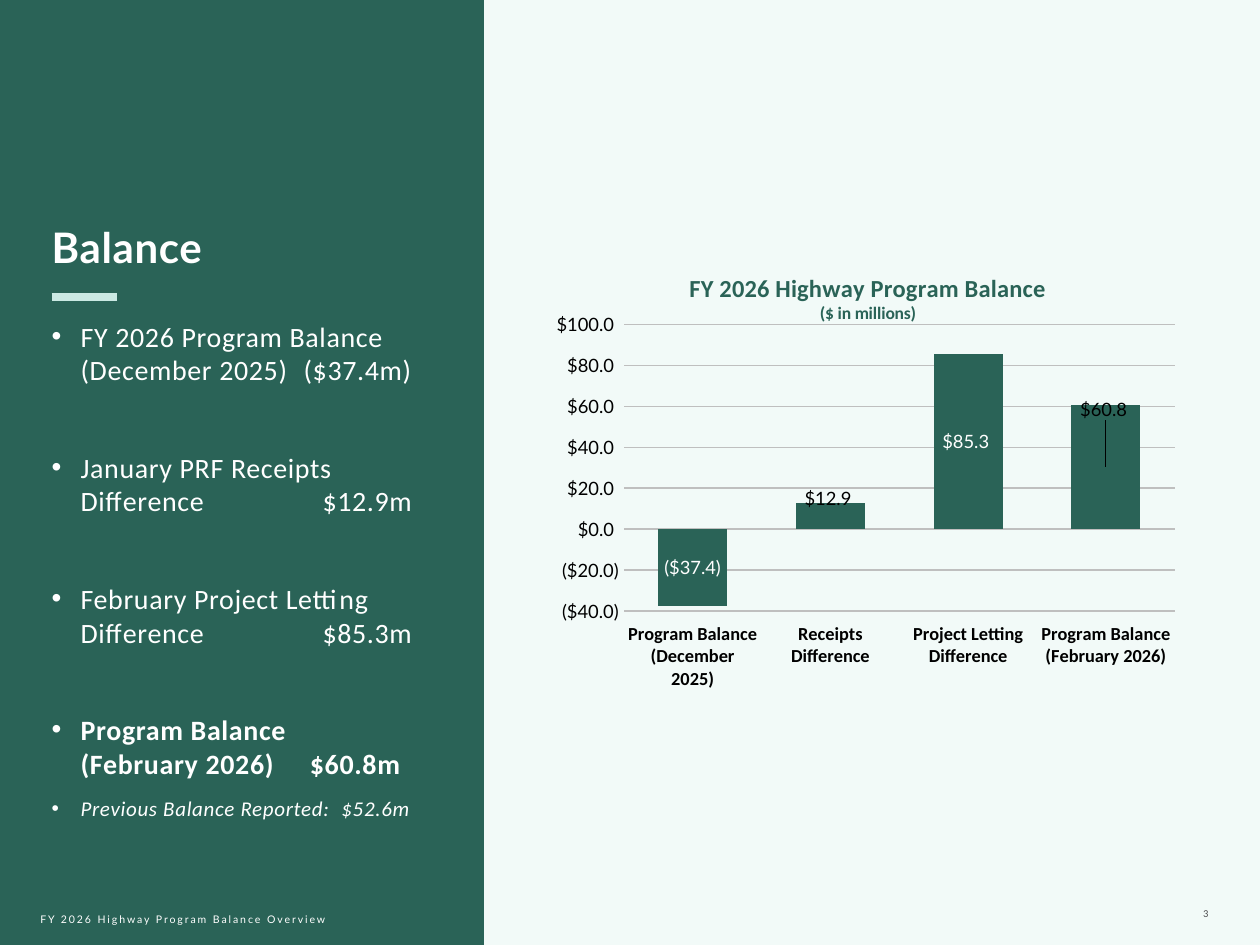
from copy import deepcopy
from dataclasses import dataclass

from lxml.etree import SubElement
from pptx import Presentation
from pptx.chart.data import CategoryChartData
from pptx.dml.color import RGBColor
from pptx.enum.chart import XL_CHART_TYPE, XL_LABEL_POSITION, XL_TICK_LABEL_POSITION, XL_TICK_MARK
from pptx.enum.shapes import MSO_CONNECTOR, MSO_SHAPE
from pptx.enum.text import MSO_ANCHOR, MSO_AUTO_SIZE, PP_ALIGN
from pptx.oxml.ns import qn
from pptx.util import Inches, Pt

GREEN = RGBColor(0x2A, 0x63, 0x57)
MINT = RGBColor(0xCB, 0xE9, 0xE3)
PALE = RGBColor(0xF2, 0xFA, 0xF8)
WHITE = RGBColor(0xFF, 0xFF, 0xFF)
BLACK = RGBColor(0, 0, 0)
GRID_GRAY = RGBColor(0xBF, 0xBF, 0xBF)
NUMBER_GRAY = RGBColor(0x4D, 0x4D, 0x4F)
MONEY = '"$"#,##0.0_);\\("$"#,##0.0\\)'

WIDTH, HEIGHT = Inches(10), Inches(7.5)
COLUMN, ROW = WIDTH / 100, HEIGHT / 75
HANG = round(2.3 * COLUMN)


@dataclass(frozen=True)
class Area:
    column: float
    row: float
    columns: float
    rows: float

    def place(self) -> tuple[int, int, int, int]:
        return (round(self.column * COLUMN), round(self.row * ROW),
                round(self.columns * COLUMN), round(self.rows * ROW))


@dataclass(frozen=True)
class Entry:
    text: str
    amount_column: float
    before: float = 36.5
    size: float = 16
    bold: bool = False
    italic: bool = False


@dataclass(frozen=True)
class Bar:
    category: str
    value: float
    label_color: RGBColor = WHITE
    label_shift: float = 0


ENTRIES = (
    Entry("FY 2026 Program Balance\v(December 2025)\t($37.4m)", 20, before=9),
    Entry("January PRF Receipts\vDifference\t$12.9m", 21.5),
    Entry("February Project Letting\vDifference\t$85.3m", 21.5),
    Entry("Program Balance\v(February 2026)\t$60.8m", 20.5, bold=True),
    Entry("Previous Balance Reported:\t$52.6m", 23, before=9, size=12, italic=True),
)
BARS = (
    Bar("Program Balance (December 2025)", -37.4),
    Bar("Receipts Difference", 12.9, BLACK, -0.04),
    Bar("Project Letting Difference", 85.3),
    Bar("Program Balance (February 2026)", 60.8, BLACK, -0.13),
)


def style_font(font, size: float, color: RGBColor, face: str, bold=False, italic=False) -> None:
    font.size, font.name, font.bold, font.italic = Pt(size), face, bold, italic
    font.color.rgb = color


def write(paragraph, text: str, *, size: float, color=WHITE, face="Calibri",
          bold=False, italic=False, spacing: float = 0, align=PP_ALIGN.LEFT) -> None:
    paragraph.text = text
    paragraph.alignment = align
    for run in paragraph.runs:
        style_font(run.font, size, color, face, bold, italic)
        run.font._element.set("spc", str(round(spacing * 100)))
    for line_break in paragraph._p.findall(qn("a:br")):
        line_break.insert(0, deepcopy(paragraph.runs[0].font._element))


def add_frame(slide, area: Area, anchor=MSO_ANCHOR.TOP, padding: float = 0):
    frame = slide.shapes.add_textbox(*area.place()).text_frame
    frame.word_wrap = True
    frame.vertical_anchor = anchor
    frame.margin_left = frame.margin_right = 0
    frame.margin_top = frame.margin_bottom = round(padding * ROW)
    return frame


def add_panel(slide, area: Area) -> None:
    panel = slide.shapes.add_shape(MSO_SHAPE.RECTANGLE, *area.place())
    panel.shadow.inherit = False
    panel.fill.solid()
    panel.fill.fore_color.rgb = GREEN
    panel.line.fill.background()


def add_rule(slide, area: Area) -> None:
    left, top, width, height = area.place()
    rule = slide.shapes.add_connector(MSO_CONNECTOR.STRAIGHT, left, top, left + width, top + height)
    rule.line.color.rgb = MINT
    rule.line.width = Pt(4.5)
    SubElement(rule._element.spPr, qn("a:effectLst"))


def add_entry(frame, entry: Entry) -> None:
    paragraph = frame.add_paragraph()
    write(paragraph, entry.text, size=entry.size, bold=entry.bold,
          italic=entry.italic, spacing=0.4)
    paragraph.space_before = Pt(entry.before)
    properties = paragraph._p.get_or_add_pPr()
    properties.set("marL", str(HANG))
    properties.set("indent", str(-HANG))
    SubElement(properties, qn("a:buFont"), typeface="Arial")
    SubElement(properties, qn("a:buChar"), char="•")
    stops = SubElement(properties, qn("a:tabLst"))
    SubElement(stops, qn("a:tab"), pos=str(round(entry.amount_column * COLUMN)), algn="l")


def manual_layout(**values):
    holder = XL_HOLDER()
    layout = SubElement(holder, qn("c:manualLayout"))
    for tag, value in values.items():
        SubElement(layout, qn(f"c:{tag}"), val=str(value))
    return holder


def XL_HOLDER():
    return SubElement(SubElement(Presentation().slides._sldIdLst, qn("c:chart")), qn("c:layout"))


def set_layout(parent, **values) -> None:
    for old in parent.findall(qn("c:layout")):
        parent.remove(old)
    parent.insert(1 if parent.tag != qn("c:plotArea") else 0, manual_layout(**values))


def label_bar(series, index: int, bar: Bar) -> None:
    label = series.points[index].data_label
    style_font(label.font, 10.5, bar.label_color, "Lato")
    label.position = XL_LABEL_POSITION.CENTER
    element = series._element.findall(f".//{qn('c:dLbl')}")[index]
    set_layout(element, x=0, y=bar.label_shift)
    number_format = SubElement(element, qn("c:numFmt"), formatCode=MONEY, sourceLinked="0")
    element.insert(2, number_format)


def add_balance_chart(slide, area: Area) -> None:
    data = CategoryChartData(number_format=MONEY)
    data.categories = [bar.category for bar in BARS]
    data.add_series("Series 1", [bar.value for bar in BARS])
    chart = slide.shapes.add_chart(XL_CHART_TYPE.COLUMN_CLUSTERED, *area.place(), data).chart
    style_font(chart.font, 10, BLACK, "Lato")
    chart.has_legend = False

    title = chart.chart_title.text_frame
    write(title.paragraphs[0], "FY 2026 Highway Program Balance", size=14, color=GREEN,
          bold=True, align=PP_ALIGN.CENTER)
    write(title.add_paragraph(), "($ in millions)", size=10, color=GREEN,
          bold=True, align=PP_ALIGN.CENTER)
    chart.chart_title.include_in_layout = False
    set_layout(chart.chart_title._element, xMode="edge", yMode="edge", x=0.21, y=0.02)
    set_layout(chart._chartSpace.chart.plotArea, layoutTarget="inner", xMode="edge",
               yMode="edge", x=0.11, y=0.15, w=0.89, h=0.65)

    for axis, face, bold in ((chart.category_axis, "Calibri", True), (chart.value_axis, "Lato", False)):
        style_font(axis.tick_labels.font, 10.5, BLACK, face, bold)
        axis.major_tick_mark = axis.minor_tick_mark = XL_TICK_MARK.NONE
    chart.category_axis.tick_label_position = XL_TICK_LABEL_POSITION.LOW
    values = chart.value_axis
    values.minimum_scale, values.maximum_scale, values.major_unit = -40, 100, 20
    values.tick_labels.number_format = MONEY
    values.tick_labels.number_format_is_linked = False
    values.format.line.fill.background()
    for line in (chart.category_axis.format.line, values.major_gridlines.format.line):
        line.color.rgb = GRID_GRAY
        line.width = Pt(0.75)

    plot = chart.plots[0]
    plot.gap_width, plot.overlap, plot.vary_by_categories = 100, -24, False
    series = plot.series[0]
    series.invert_if_negative = False
    series.format.fill.solid()
    series.format.fill.fore_color.rgb = GREEN
    for index, bar in enumerate(BARS):
        label_bar(series, index, bar)


def main() -> None:
    deck = Presentation()
    deck.slide_width, deck.slide_height = WIDTH, HEIGHT
    slide = deck.slides.add_slide(deck.slide_layouts[6])
    slide.background.fill.solid()
    slide.background.fill.fore_color.rgb = PALE

    add_panel(slide, Area(0, 0, 38.4, 75))
    number = add_frame(slide, Area(86.2, 69.5, 9.7, 4), MSO_ANCHOR.BOTTOM, 0.5)
    write(number.paragraphs[0], "3", size=6, color=NUMBER_GRAY, spacing=1.1, align=PP_ALIGN.RIGHT)
    add_balance_chart(slide, Area(44.1, 20.5, 49.2, 35))

    balance = add_frame(slide, Area(4.1, 17.6, 31.2, 48.3))
    balance.auto_size = MSO_AUTO_SIZE.SHAPE_TO_FIT_TEXT
    heading = balance.paragraphs[0]
    write(heading, "Balance", size=24, face="Lato", bold=True, spacing=0.4)
    heading.space_after = Pt(18)
    for entry in ENTRIES:
        add_entry(balance, entry)
    add_rule(slide, Area(4.1, 23.6, 5.2, 0))

    footer = add_frame(slide, Area(3.2, 71.5, 30.1, 3), MSO_ANCHOR.MIDDLE, 0.5)
    write(footer.paragraphs[0], "FY 2026 Highway Program Balance Overview", size=6,
          face="Lato", spacing=1.1)
    deck.save("out.pptx")


if __name__ == "__main__":
    main()
